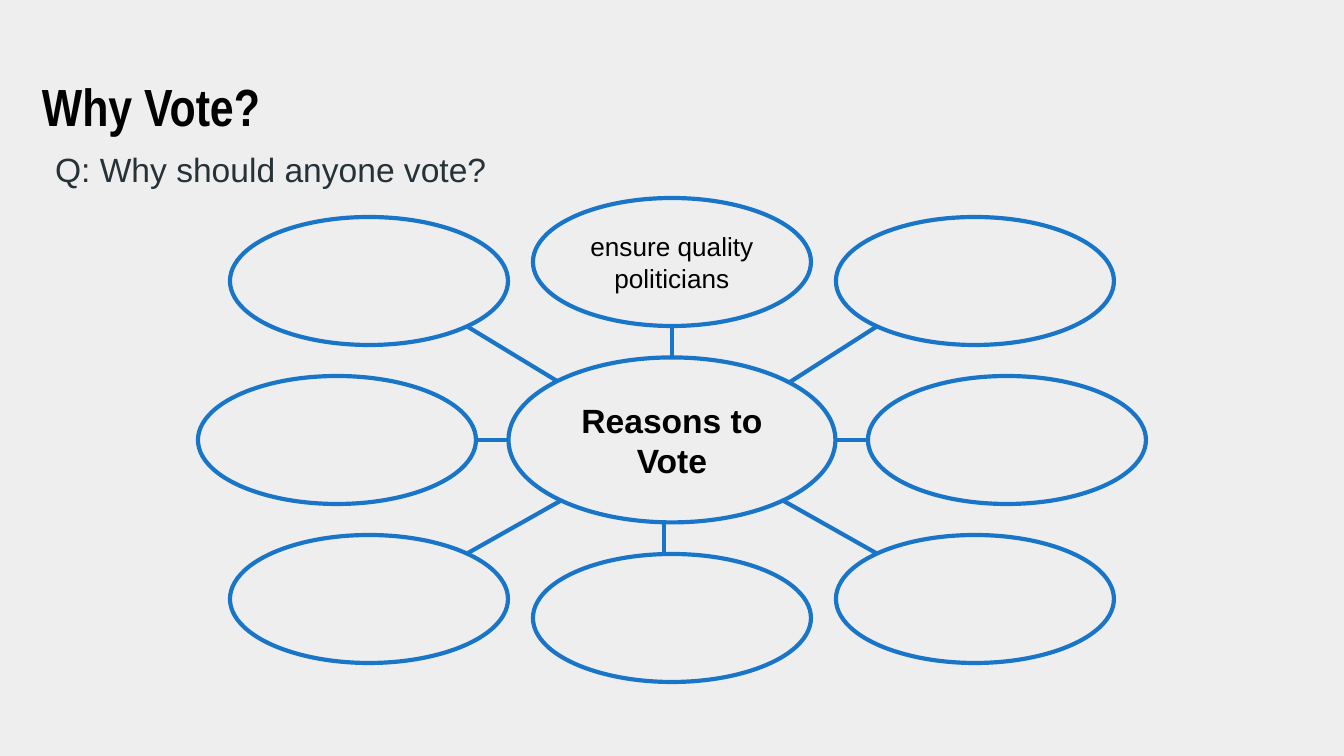
import pptx
import pptx.util
import pptx.dml.color
import pptx.enum.shapes
import pptx.enum.text
import pptx.oxml.ns
import lxml.etree

HUES = {"back": "EEEEEE", "blue": "1875C8", "black": "000000", "slate": "263238"}
SCALE = 914400 / 134.4
MID_X, MID_Y = 672, 440
HUB = (327, 165)
NODE = (278, 128)
NODES = [
    (0, -178, "ensure quality politicians"),
    (0, 178, ""),
    (335, 0, ""),
    (-335, 0, ""),
    (303, -159, ""),
    (303, 159, ""),
    (-303, 159, ""),
    (-303, -159, ""),
]
LINKS = [
    (672, 327, 672, 357),
    (664, 522, 664, 553),
    (867, 440, 835, 440),
    (508, 440, 477, 440),
    (876, 327, 790, 382),
    (876, 553, 782, 500),
    (562, 500, 468, 553),
    (468, 327, 557, 381),
]


def px(*sizes):
    return [pptx.util.Emu(round(size * SCALE)) for size in sizes]


def hue(name):
    return pptx.dml.color.RGBColor.from_string(HUES[name])


def add_run(para, text, size, color, bold=False, face="Arial"):
    run = para.add_run()
    run.text = text
    run.font.name = face
    run.font.size = pptx.util.Pt(size)
    run.font.bold = bold
    run.font.color.rgb = hue(color)


def set_line(item):
    item.line.color.rgb = hue("blue")
    item.line.width = pptx.util.Pt(2.25)


def add_label(slide, box, pad):
    frame = slide.shapes.add_textbox(*px(*box)).text_frame
    frame.word_wrap = True
    frame.auto_size = pptx.enum.text.MSO_AUTO_SIZE.SHAPE_TO_FIT_TEXT
    frame.margin_left, frame.margin_top, frame.margin_right, frame.margin_bottom = px(*pad)
    return frame.paragraphs[0]


def add_oval(slide, dx, dy, size, text, points, bold=False):
    wide, high = size
    box = px(MID_X + dx - wide / 2, MID_Y + dy - high / 2, wide, high)
    oval = slide.shapes.add_shape(pptx.enum.shapes.MSO_SHAPE.OVAL, *box)
    oval.shadow.inherit = False
    oval.fill.background()
    set_line(oval)
    if text:
        frame = oval.text_frame
        frame.word_wrap = True
        frame.vertical_anchor = pptx.enum.text.MSO_ANCHOR.MIDDLE
        para = frame.paragraphs[0]
        para.alignment = pptx.enum.text.PP_ALIGN.CENTER
        add_run(para, text, points, "black", bold)


def add_link(slide, ends):
    link = slide.shapes.add_connector(pptx.enum.shapes.MSO_CONNECTOR.STRAIGHT, *px(*ends))
    set_line(link)
    lxml.etree.SubElement(link._element.spPr, pptx.oxml.ns.qn("a:effectLst"))


def main():
    deck = pptx.Presentation()
    deck.slide_width, deck.slide_height = px(1344, 756)
    slide = deck.slides.add_slide(deck.slide_layouts[6])
    slide.background.fill.solid()
    slide.background.fill.fore_color.rgb = hue("back")

    title = add_label(slide, (42, 81, 1142, 56), (0, 0, 0, 0))
    title.line_spacing = 0.9
    add_run(title, "Why Vote?", 28, "black", True, "Arial Narrow")
    query = add_label(slide, (42, 142, 1103, 54), (13, 7, 13, 7))
    add_run(query, "Q: Why should anyone vote?", 18, "slate")

    add_oval(slide, 0, 0, HUB, "Reasons to Vote", 18, True)
    for dx, dy, text in NODES:
        add_oval(slide, dx, dy, NODE, text, 14)
    for ends in LINKS:
        add_link(slide, ends)
    deck.save("out.pptx")


if __name__ == "__main__":
    main()
